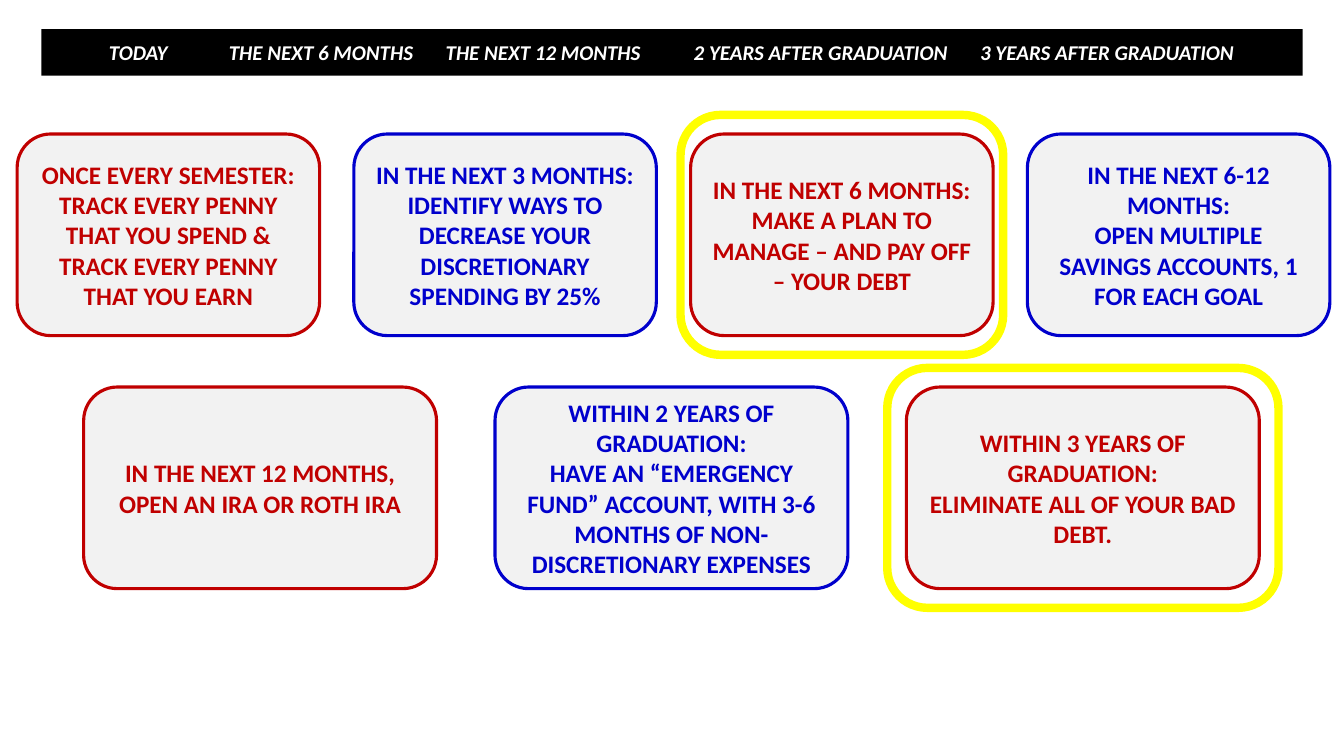
from lxml import etree
from pptx import Presentation
from pptx.dml.color import RGBColor
from pptx.enum.shapes import MSO_SHAPE
from pptx.enum.text import MSO_ANCHOR, PP_ALIGN
from pptx.oxml.ns import qn
from pptx.util import Pt

EMU_PER_PX = 9144
RECTANGLE = MSO_SHAPE.RECTANGLE
ROUNDED = MSO_SHAPE.ROUNDED_RECTANGLE
MIDDLE = MSO_ANCHOR.MIDDLE
CENTER, LEFT = PP_ALIGN.CENTER, PP_ALIGN.LEFT

BLACK = RGBColor(0x00, 0x00, 0x00)
WHITE = RGBColor(0xFF, 0xFF, 0xFF)
GRAY = RGBColor(0xF2, 0xF2, 0xF2)
RED = RGBColor(0xC0, 0x00, 0x00)
BLUE = RGBColor(0x00, 0x00, 0xCC)
YELLOW = RGBColor(0xFF, 0xFF, 0x00)
FONT = "Calibri"

# Periods with their distance from the first one
PERIODS = [
    ("TODAY", 0),
    ("THE NEXT 6 MONTHS", 119),
    ("THE NEXT 12 MONTHS", 334),
    ("2 YEARS AFTER GRADUATION", 580),
    ("3 YEARS AFTER GRADUATION", 864),
]

# Each goal: text, colour, horizontal margin of its highlight (0 for none)
NEAR_GOALS = [
    ("ONCE EVERY SEMESTER:\nTRACK EVERY PENNY THAT YOU SPEND & TRACK EVERY PENNY "
     "THAT YOU EARN", RED, 0),
    ("IN THE NEXT 3 MONTHS:\nIDENTIFY WAYS TO DECREASE YOUR DISCRETIONARY "
     "SPENDING BY 25%", BLUE, 0),
    ("IN THE NEXT 6 MONTHS:\nMAKE A PLAN TO MANAGE – AND PAY OFF – YOUR DEBT", RED, 10),
    ("IN THE NEXT 6-12 MONTHS:\nOPEN MULTIPLE SAVINGS ACCOUNTS, 1 FOR EACH GOAL",
     BLUE, 0),
]
LATER_GOALS = [
    ("IN THE NEXT 12 MONTHS, OPEN AN IRA OR ROTH IRA", RED, 0),
    ("WITHIN 2 YEARS OF GRADUATION:\nHAVE AN “EMERGENCY FUND” ACCOUNT, WITH 3-6 "
     "MONTHS OF NON-DISCRETIONARY EXPENSES", BLUE, 0),
    ("WITHIN 3 YEARS OF GRADUATION:\nELIMINATE ALL OF YOUR BAD DEBT.", RED, 19),
]
HIGHLIGHT_RISE = 19


def px(length):
    return length * EMU_PER_PX


def add_box(slide, kind, box, fill=None, line=None, line_width=0):
    shape = slide.shapes.add_shape(kind, *map(px, box))
    shape.shadow.inherit = False
    if fill is None:
        shape.fill.background()
    else:
        shape.fill.solid()
        shape.fill.fore_color.rgb = fill
    if line is None:
        shape.line.fill.background()
    else:
        shape.line.color.rgb = line
        shape.line.width = Pt(line_width)
    return shape


def write_text(shape, text, size, color, alignment, italic=False):
    frame = shape.text_frame
    frame.text = text
    frame.word_wrap = True
    frame.vertical_anchor = MIDDLE
    for paragraph in frame.paragraphs:
        paragraph.alignment = alignment
        for run in paragraph.runs:
            font = run.font
            font.name, font.size = FONT, Pt(size)
            font.bold, font.italic = True, italic
            font.color.rgb = color


def add_timeline(slide, box):
    bar = add_box(slide, RECTANGLE, box, fill=BLACK)
    write_text(bar, "\t".join(name for name, _ in PERIODS), 15, WHITE, LEFT, italic=True)
    bar.text_frame.margin_left = px(67)
    properties = bar.text_frame.paragraphs[0]._p.get_or_add_pPr()
    tabs = etree.SubElement(properties, qn("a:tabLst"))
    for _, offset in PERIODS[1:]:
        etree.SubElement(tabs, qn("a:tab"), pos=str(px(offset)), algn="l")


def add_goal_row(slide, box, card_width, goals):
    """Spread equal cards over the box, the last one ending at its right edge."""
    left, top, width, height = box
    step = (width - card_width) // (len(goals) - 1)
    for index, (text, color, margin) in enumerate(goals):
        card_left = left + index * step
        card = add_box(slide, ROUNDED, (card_left, top, card_width, height),
                       GRAY, color, 2.25)
        write_text(card, text, 18, color, CENTER)
        if margin:
            add_box(slide, ROUNDED,
                    (card_left - margin, top - HIGHLIGHT_RISE,
                     card_width + 2 * margin, height + 2 * HIGHLIGHT_RISE),
                    line=YELLOW, line_width=6)


def main():
    presentation = Presentation()
    presentation.slide_width, presentation.slide_height = px(1333), px(750)
    slide = presentation.slides.add_slide(presentation.slide_layouts[6])
    add_timeline(slide, (41, 29, 1251, 46))
    add_goal_row(slide, (17, 133, 1303, 200), 300, NEAR_GOALS)
    add_goal_row(slide, (83, 384, 1167, 200), 350, LATER_GOALS)
    presentation.save("out.pptx")


if __name__ == "__main__":
    main()
